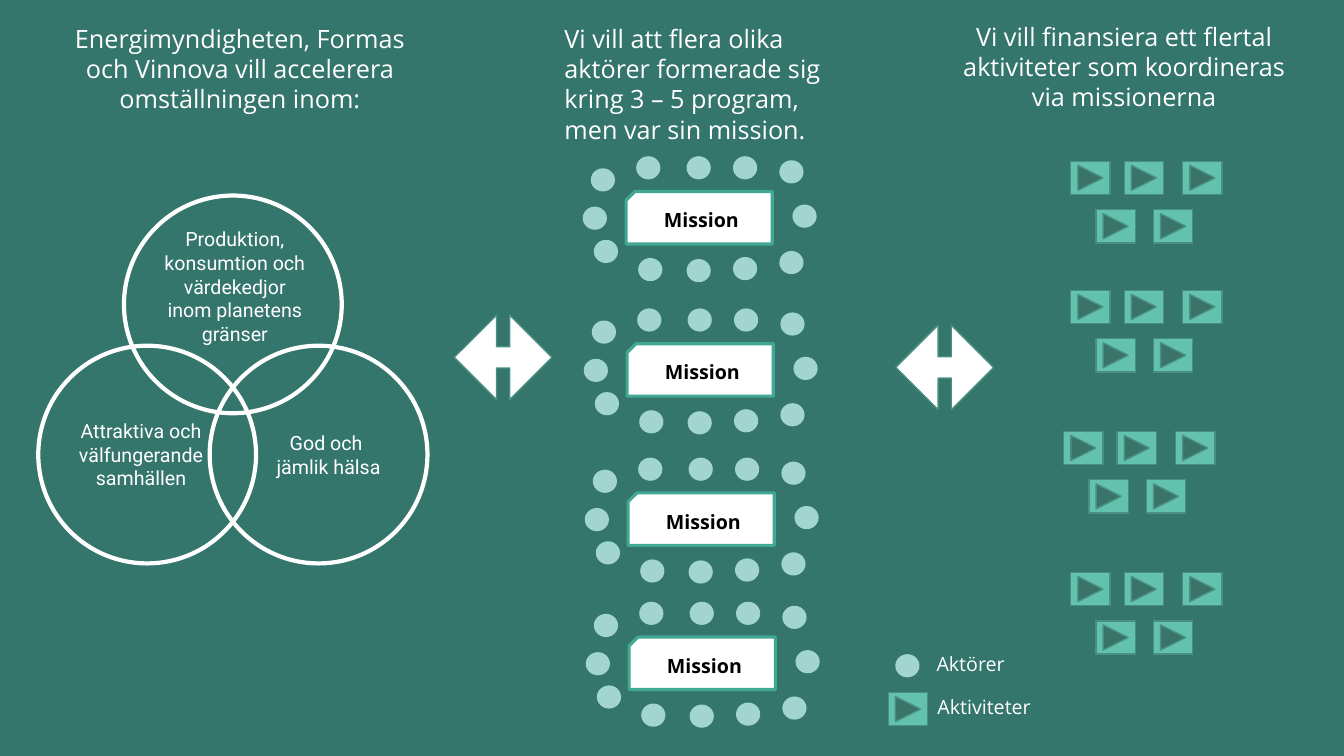
import pptx
import pptx.util
import pptx.dml.color
import pptx.enum.shapes
import pptx.enum.text

Inches = pptx.util.Inches
KIND = pptx.enum.shapes.MSO_SHAPE
ALIGN = pptx.enum.text.PP_ALIGN
ANCHOR = pptx.enum.text.MSO_ANCHOR
FIT = pptx.enum.text.MSO_AUTO_SIZE

WHITE = "FFFFFF"
DOT = (0.24, 0.23)
BUTTON = (0.39, 0.33)
ACTORS = [
    (0.53, 0), (1.03, 0), (1.49, 0), (1.95, 0.04), (2.08, 0.48), (1.95, 0.94),
    (1.49, 1), (1.03, 1.02), (0.55, 1.01), (0.11, 0.83), (0, 0.5), (0.08, 0.12),
]
ACTS = [(0, 0), (0.53, 0), (1.11, 0), (0.25, 0.48), (0.82, 0.48)]


def color(code):
    """Turn a hex string into a colour."""
    return pptx.dml.color.RGBColor.from_string(code)


def assign(target, values):
    """Set every attribute named in a dict."""
    for name, value in values.items():
        setattr(target, name, value)


def write(frame, lines, look, align=ALIGN.CENTER, **layout):
    """Fill a text frame with evenly styled lines."""
    assign(frame, {"word_wrap": True, **layout})
    face, size, code, bold = look
    for i, line in enumerate(lines):
        para = frame.paragraphs[0] if i == 0 else frame.add_paragraph()
        para.alignment = align
        run = para.add_run()
        run.text = line
        assign(run.font, {"name": face, "size": pptx.util.Pt(size), "bold": bold})
        run.font.color.rgb = color(code)


def shape(parent, kind, box, fill=None, line=None, width=1):
    """Add a flat preset shape."""
    item = parent.add_shape(kind, *map(Inches, box))
    item.shadow.inherit = False
    if fill:
        item.fill.solid()
        item.fill.fore_color.rgb = color(fill)
    else:
        item.fill.background()
    if line:
        item.line.color.rgb = color(line)
        item.line.width = pptx.util.Pt(width)
    else:
        item.line.fill.background()
    return item


def label(shapes, box, text, size=18, align=ALIGN.CENTER, wrap=True):
    """Add a white text box."""
    frame = shapes.add_textbox(*map(Inches, box)).text_frame
    write(frame, [text], ("Open Sans", size, WHITE, False), align,
          word_wrap=wrap, auto_size=FIT.SHAPE_TO_FIT_TEXT)


def actor(parent, left, top):
    """Draw one actor dot."""
    shape(parent, KIND.OVAL, (left, top, *DOT), "A1D5CE")


def button(parent, left, top):
    """Draw one activity button."""
    shape(parent, KIND.ACTION_BUTTON_FORWARD_OR_NEXT, (left, top, *BUTTON),
          "62C2AE", "499081")


def goals(shapes, left, top):
    """Draw three overlapping goal circles."""
    size = 2.16
    circles = [
        (1.7, 1.49, ["God och ", "jämlik hälsa"], (0.2, 0.2, 0, 0.2), ANCHOR.MIDDLE),
        (0, 1.49, ["Attraktiva och välfungerande samhällen"],
         (0, 0.2, 0.12, 0.2), ANCHOR.MIDDLE),
        (0.85, 0, ["Produktion, konsumtion och värdekedjor inom planetens gränser"],
         (0.08, 0, 0.04, 0.05), ANCHOR.TOP),
    ]
    sides = ("margin_left", "margin_top", "margin_right", "margin_bottom")
    for x, y, lines, insets, anchor in circles:
        ring = shape(shapes, KIND.OVAL, (left + x, top + y, size, size),
                     line=WHITE, width=3)
        write(ring.text_frame, lines, ("Roboto", 14, WHITE, False),
              vertical_anchor=anchor, **dict(zip(sides, map(Inches, insets))))


def arrow(shapes, left, top):
    """Draw a two-way arrow laid on its side."""
    item = shape(shapes, KIND.UP_DOWN_ARROW, (left, top, 0.84, 0.97), WHITE, "499081")
    item.rotation = 270
    item.adjustments[0] = 0.5
    item.adjustments[1] = 0.252


def mission(shapes, left, top):
    """Draw a mission card ringed by actors."""
    group = shapes.add_group_shape().shapes
    card = shape(group, KIND.SNIP_1_RECTANGLE, (left + 0.43, top + 0.35, 1.45, 0.52),
                 WHITE, "41A893", 2.25)
    card.element.spPr.xfrm.set("flipH", "1")
    write(card.text_frame, ["Mission"], ("Open Sans", 14, "000000", True),
          vertical_anchor=ANCHOR.MIDDLE)
    for x, y in ACTORS:
        actor(group, left + x, top + y)


def cluster(shapes, left, top):
    """Draw five activity buttons in two rows."""
    for x, y in ACTS:
        button(shapes, left + x, top + y)


def legend(shapes, left, top):
    """Explain the dot and the button."""
    actor(shapes, left + 0.07, top + 0.07)
    button(shapes, left, top + 0.45)
    label(shapes, (left + 0.38, top, 0.89, 0.34), "Aktörer", 14, ALIGN.LEFT, False)
    label(shapes, (left + 0.39, top + 0.42, 1.14, 0.34), "Aktiviteter", 14,
          ALIGN.LEFT, False)


def main():
    """Build and save the slide."""
    deck = pptx.Presentation()
    assign(deck, {"slide_width": Inches(13.33), "slide_height": Inches(7.5)})
    slide = deck.slides.add_slide(deck.slide_layouts[6])
    slide.background.fill.solid()
    slide.background.fill.fore_color.rgb = color("34756C")
    shapes = slide.shapes

    label(shapes, (0.51, 0.18, 3.74, 1.01),
          "Energimyndigheten, Formas och Vinnova vill accelerera omställningen inom:")
    label(shapes, (5.5, 0.18, 2.75, 1.31),
          "Vi vill att flera olika aktörer formerade sig kring 3 – 5 program, "
          "men var sin mission.", align=ALIGN.LEFT)
    label(shapes, (9.42, 0.16, 3.46, 1.01),
          "Vi vill finansiera ett flertal aktiviteter som koordineras via missionerna")

    goals(shapes, 0.38, 1.94)
    arrow(shapes, 4.57, 3.06)
    arrow(shapes, 8.95, 3.16)
    for i, top in enumerate((1.55, 3.06, 4.54, 5.97)):
        mission(shapes, 5.78 + 0.01 * i, top)
    for left, top in ((10.62, 1.6), (10.62, 2.88), (10.55, 4.28), (10.62, 5.68)):
        cluster(shapes, left, top)
    legend(shapes, 8.81, 6.42)
    deck.save("out.pptx")


if __name__ == "__main__":
    main()
